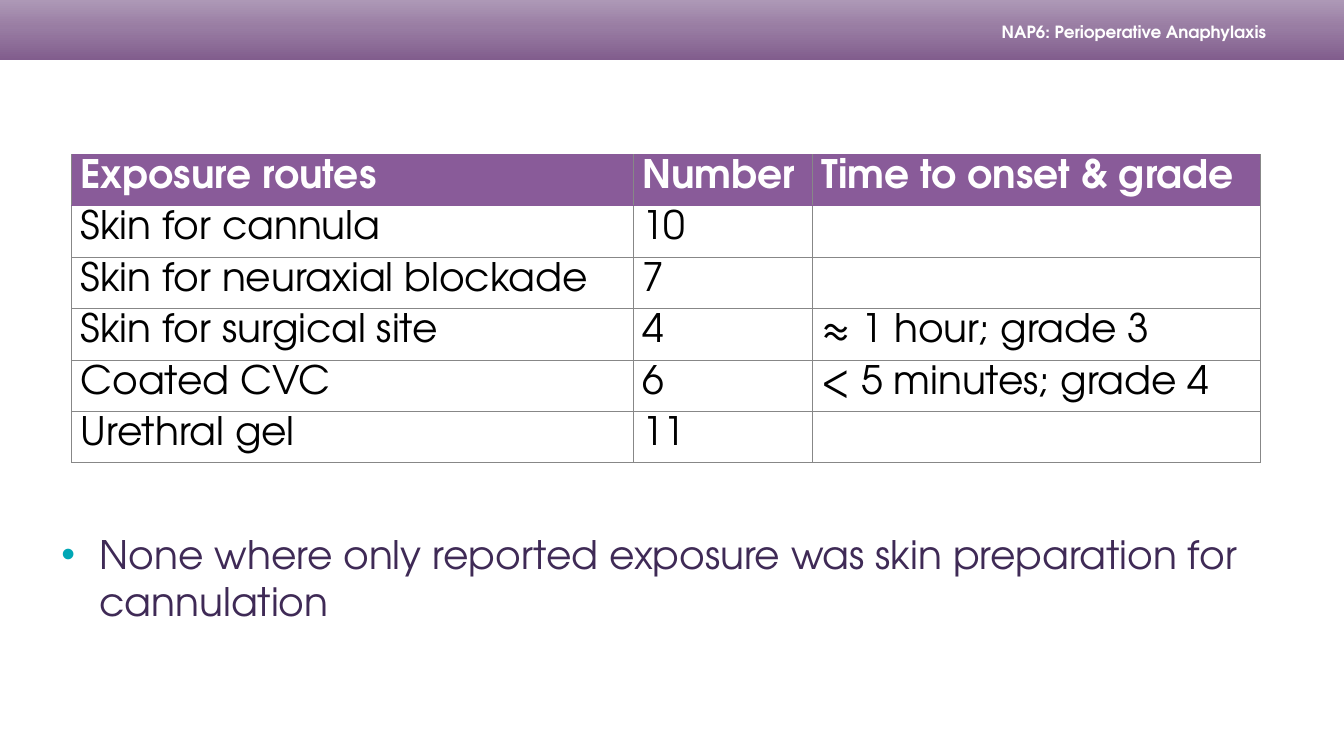
"""Build the slide on exposure routes in perioperative anaphylaxis."""
import copy
import dataclasses

import pptx
import pptx.dml.color
import pptx.enum.shapes
import pptx.enum.text
import pptx.oxml
import pptx.oxml.ns
import pptx.util

Inches = pptx.util.Inches
FONT = "TeX Gyre Adventor"
PURPLE = "895B99"
GREY = "878787"
WHITE = "FFFFFF"


@dataclasses.dataclass
class Exposure:
    route: str
    number: str
    onset: str = ""


HEADINGS = Exposure("Exposure routes", "Number", "Time to onset & grade")
EXPOSURES = [
    Exposure("Skin for cannula", "10"),
    Exposure("Skin for neuraxial blockade", "7"),
    Exposure("Skin for surgical site", "4", "≈ 1 hour; grade 3"),
    Exposure("Coated CVC", "6", "< 5 minutes; grade 4"),
    Exposure("Urethral gel", "11"),
]
COLUMN_WIDTHS = [5.57, 1.78, 4.44]
ROW_HEIGHT = 0.51
BANNER_STOPS = [(0, "815D8D"), (0.55, "997DA3"), (1, "AD98B6")]


def rgb(code: str) -> pptx.dml.color.RGBColor:
    return pptx.dml.color.RGBColor.from_string(code)


def xml(content: str):
    namespace = pptx.oxml.ns.nsdecls("a")
    tag, rest = content[1:].split(" ", 1)
    return pptx.oxml.parse_xml(f"<{tag} {namespace} {rest}")


def style(paragraph, size: float, color: str, bold: bool = False) -> None:
    font = paragraph.font
    font.name, font.size, font.bold = FONT, pptx.util.Pt(size), bold
    font.color.rgb = rgb(color)


def add_text(slide, left: float, top: float, width: float, height: float, text: str):
    frame = slide.shapes.add_textbox(
        Inches(left), Inches(top), Inches(width), Inches(height)).text_frame
    frame.word_wrap = True
    frame.text = text
    return frame


def add_banner(slide) -> None:
    banner = slide.shapes.add_shape(
        pptx.enum.shapes.MSO_SHAPE.RECTANGLE, 0, 0, Inches(13.33), Inches(0.6))
    banner.shadow.inherit = False
    banner.line.fill.background()
    banner.fill.gradient()
    banner.fill.gradient_angle = 90
    first_stop = banner.fill._fill._gradFill.gsLst[0]
    first_stop.addnext(copy.deepcopy(first_stop))
    for stop, (position, color) in zip(banner.fill.gradient_stops, BANNER_STOPS):
        stop.position = position
        stop.color.rgb = rgb(color)

    report = add_text(slide, 8.35, 0.18, 4.45, 0.28, "NAP6: Perioperative Anaphylaxis")
    report.vertical_anchor = pptx.enum.text.MSO_ANCHOR.MIDDLE
    report.margin_right = Inches(0.24)
    report.paragraphs[0].alignment = pptx.enum.text.PP_ALIGN.RIGHT
    style(report.paragraphs[0], 12, WHITE, bold=True)


def set_borders(cell, colors: dict[str, str]) -> None:
    properties = cell._tc.get_or_add_tcPr()
    for index, (side, color) in enumerate(colors.items()):
        properties.insert(index, xml(
            f'<a:ln{side} w="3810"><a:solidFill><a:srgbClr val="{color}"/>'
            f'</a:solidFill></a:ln{side}>'))


def fill_cell(cell, text: str, row: int) -> None:
    heading = row == 0
    cell.text = text
    cell.vertical_anchor = pptx.enum.text.MSO_ANCHOR.MIDDLE
    cell.margin_left = cell.margin_right = Inches(0.09)
    cell.margin_top, cell.margin_bottom = 0, Inches(0.04)
    style(cell.text_frame.paragraphs[0], 28, WHITE if heading else "000000", heading)
    if heading:
        cell.fill.solid()
        cell.fill.fore_color.rgb = rgb(PURPLE)
    else:
        cell.fill.background()
    set_borders(cell, {
        "L": GREY, "R": GREY,
        "T": PURPLE if row < 2 else GREY,
        "B": PURPLE if heading else GREY,
    })


def add_exposure_table(slide) -> None:
    rows = [HEADINGS, *EXPOSURES]
    table = slide.shapes.add_table(
        len(rows), len(COLUMN_WIDTHS), Inches(0.71), Inches(1.53),
        Inches(sum(COLUMN_WIDTHS)), Inches(ROW_HEIGHT * len(rows))).table
    table.horz_banding = False
    for column, width in zip(table.columns, COLUMN_WIDTHS):
        column.width = Inches(width)
    for row, exposure in enumerate(rows):
        for column, text in enumerate(dataclasses.astuple(exposure)):
            fill_cell(table.cell(row, column), text, row)


def add_finding(slide) -> None:
    frame = add_text(
        slide, 0.51, 5.17, 12, 1.24,
        "None where only reported exposure was skin preparation for cannulation")
    frame.margin_top = Inches(0.09)
    finding = frame.paragraphs[0]
    properties = finding._p.get_or_add_pPr()
    properties.set("marL", str(Inches(0.38)))
    properties.set("indent", str(Inches(-0.38)))
    properties.append(xml('<a:buClr ><a:srgbClr val="00A7B5"/></a:buClr>'))
    properties.append(xml('<a:buFont typeface="Arial"/>'))
    properties.append(xml('<a:buChar char="•"/>'))
    style(finding, 28, "3F2A56")


def main() -> None:
    deck = pptx.Presentation()
    deck.slide_width, deck.slide_height = Inches(13.33), Inches(7.5)
    slide = deck.slides.add_slide(deck.slide_layouts[6])
    add_banner(slide)
    add_exposure_table(slide)
    add_finding(slide)
    deck.save("out.pptx")


if __name__ == "__main__":
    main()
